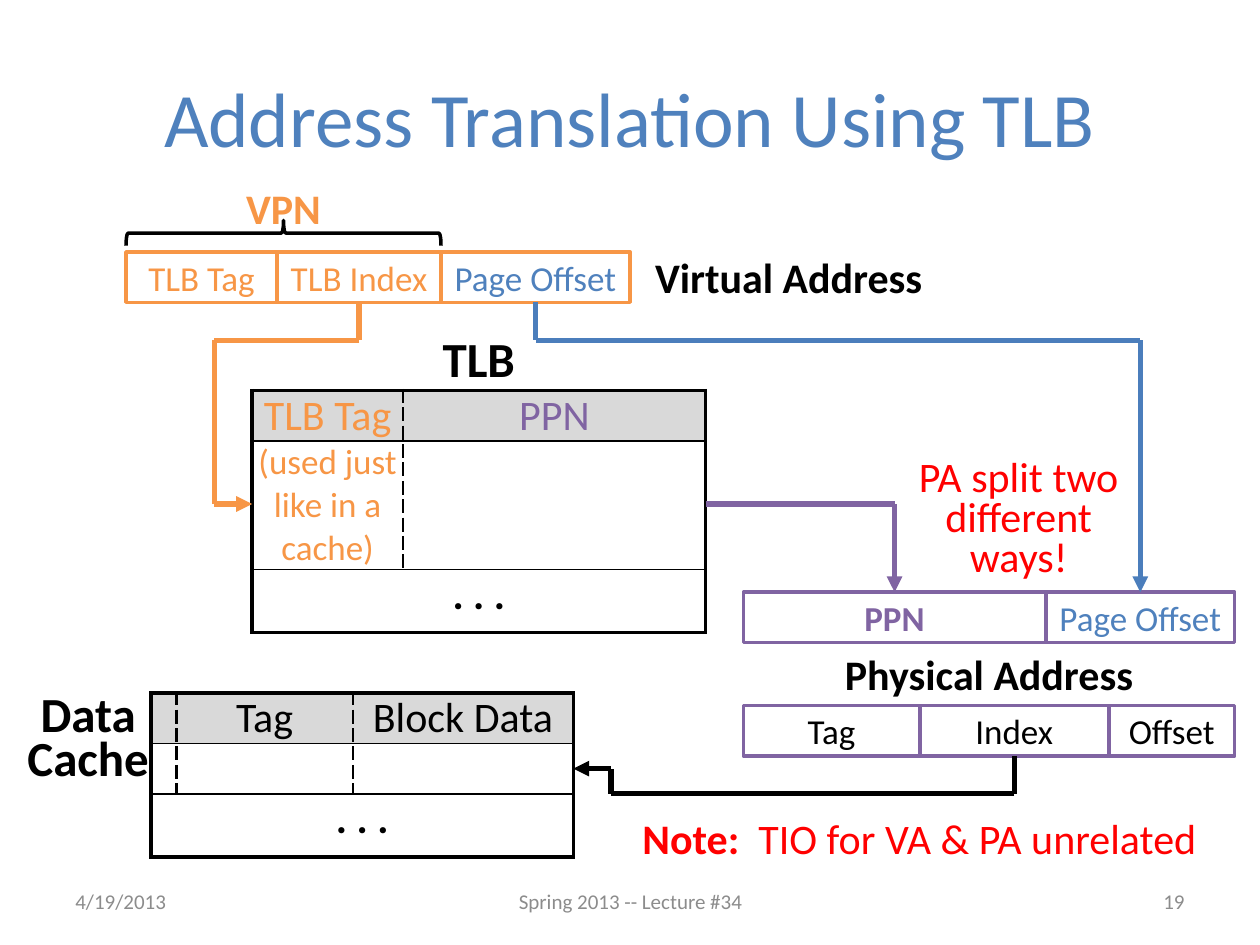
"""Build the slide on address translation with a TLB."""
import itertools
import pptx
import pptx.dml.color
import pptx.enum.shapes
import pptx.enum.text
import pptx.oxml.ns
import pptx.util
from lxml import etree

Cm, Pt = pptx.util.Cm, pptx.util.Pt
hue = pptx.dml.color.RGBColor.from_string
kinds = pptx.enum.shapes.MSO_SHAPE
side = pptx.enum.text.PP_ALIGN
rise = pptx.enum.text.MSO_ANCHOR
qn = pptx.oxml.ns.qn
inch = 2.54
orange, blue, violet, black = "F79646", "4F81BD", "8064A2", "000000"
red, gray = "FF0000", "8C8C8C"


def write(frame, text, tint, size, bold=False, align=side.CENTER, gap=None):
    for num, row in enumerate(text.split("\n")):
        para = frame.add_paragraph() if num else frame.paragraphs[0]
        para.alignment, para.line_spacing = align, gap
        run = para.add_run()
        run.text = row
        look = {"name": "Calibri", "size": Pt(size), "bold": bold}
        for key, val in look.items():
            setattr(run.font, key, val)
        run.font.color.rgb = hue(tint)
    return para


def edge(cell, name, width, dash="solid"):
    props = cell._tc.get_or_add_tcPr()
    line = etree.SubElement(props, qn("a:ln" + name), w=str(Pt(width)))
    fill = etree.SubElement(line, qn("a:solidFill"))
    etree.SubElement(fill, qn("a:srgbClr"), val=black)
    etree.SubElement(line, qn("a:prstDash"), val=dash)


deck = pptx.Presentation()
deck.slide_width, deck.slide_height = Cm(25.4), Cm(19.05)
slide = deck.slides.add_slide(deck.slide_layouts[6])
shapes = slide.shapes

mid = {"vertical_anchor": rise.MIDDLE, "word_wrap": True}
top = {"vertical_anchor": rise.TOP, "word_wrap": True}
free = {"vertical_anchor": rise.TOP, "word_wrap": False}
tight = free | {"margin_left": Cm(0.18), "margin_right": Cm(0.18),
                "margin_top": Cm(0.08), "margin_bottom": Cm(0.08)}
labels = [
    ((0.5, 0.3, 9, 1.25), mid, ("Address Translation Using TLB", blue, 44)),
    ((0.5, 6.95, 2.33, 0.4), mid, ("4/19/2013", gray, 12, False, side.LEFT)),
    ((3.42, 6.95, 3.17, 0.4), mid, ("Spring 2013 -- Lecture #34", gray, 12)),
    ((7.17, 6.95, 2.33, 0.4), mid, ("19", gray, 12, False, side.RIGHT)),
    ((2, 2.65, 3.6, 0.46), tight, ("TLB", black, 28, True, side.CENTER, 0.85)),
    ((1, 1.4, 2.5, 0.5), top, ("VPN", orange, 24, True)),
    ((5.1, 1.95, 2.35, 0.5), free,
     ("Virtual Address", black, 24, True, side.LEFT)),
    ((5.9, 5.1, 3.9, 0.5), free, ("Physical Address", black, 24, True)),
    ((0.1, 5.5, 1.2, 0.8), tight,
     ("Data\nCache", black, 28, True, side.CENTER, 0.75)),
    ((7.1, 3.6, 1.97, 1.08), top,
     ("PA split two different ways!", red, 24, False, side.CENTER, 0.8)),
    ((5, 6.4, 4.65, 0.5), top, ("Note:  ", red, 24, True, side.LEFT)),
]
for area, form, words in labels:
    frame = shapes.add_textbox(*[Cm(inch * v) for v in area]).text_frame
    for key, val in form.items():
        setattr(frame, key, val)
    last = write(frame, *words)
rest = last.add_run()
rest.text = "TIO for VA & PA unrelated"
for key, val in {"name": "Calibri", "size": Pt(24), "bold": False}.items():
    setattr(rest.font, key, val)
rest.font.color.rgb = hue(red)

bars = [
    ("VA", 1, 2, orange, [("TLB Tag", 1.2, orange), ("TLB Index", 1.3, orange),
                          ("Page Offset", 1.5, blue)]),
    ("PA", 5.9, 4.7, violet, [("PPN", 2.4, violet),
                              ("Page Offset", 1.5, blue)]),
    ("TIO", 5.9, 5.6, violet, [("Tag", 1.4, black), ("Index", 1.5, black),
                               ("Offset", 1, black)]),
]
boxes = {}
for bar, left, high, rim, parts in bars:
    for text, wide, tint in parts:
        area = [Cm(inch * v) for v in (left, high, wide, 0.4)]
        box = shapes.add_shape(kinds.RECTANGLE, *area)
        box.shadow.inherit = False
        box.fill.background()
        box.line.color.rgb, box.line.width = hue(rim), Pt(2)
        for key, val in mid.items():
            setattr(box.text_frame, key, val)
        write(box.text_frame, text, tint, 20, text == "PPN")
        boxes[bar, text] = box
        left += wide

area = [Cm(inch * v) for v in (2.15, 0.6, 0.2, 2.5)]
brace = shapes.add_shape(kinds.LEFT_BRACE, *area)
brace.rotation = 90
brace.shadow.inherit = False
brace.fill.background()
brace.line.color.rgb, brace.line.width = hue(black), Pt(2)

grids = [
    (2, 3.1, [1.2, 2.4], [0.4, 1.02, 0.5], {
        (0, 0): ("TLB Tag", orange, 24), (0, 1): ("PPN", violet, 24),
        (1, 0): ("(used just like in a cache)", orange, 20)}),
    (1.2, 5.5, [0.2, 1.4, 1.75], [0.4, 0.4, 0.5], {
        (0, 1): ("Tag", black, 24), (0, 2): ("Block Data", black, 24)}),
]
for left, high, cols, rows, cells in grids:
    area = [Cm(inch * v) for v in (left, high, sum(cols), sum(rows))]
    table = shapes.add_table(len(rows), len(cols), *area).table
    table.first_row = table.horz_banding = False
    for col, wide in zip(table.columns, cols):
        col.width = Cm(inch * wide)
    for row, tall in zip(table.rows, rows):
        row.height = Cm(inch * tall)
    end = len(cols) - 1
    table.cell(2, 0).merge(table.cell(2, end))
    cells[2, 0] = (". . .", black, 24, True)
    for r, c in itertools.product(range(3), range(end + 1)):
        cell = table.cell(r, c)
        for name in ("left", "right", "top", "bottom"):
            setattr(cell, "margin_" + name, 0)
        if not cell.is_spanned:
            whole = cell.is_merge_origin
            for name, outer in (("L", c == 0), ("R", c == end or whole)):
                edge(cell, name, *((2.25,) if outer else (1.5, "lgDash")))
            edge(cell, "T", 2.25 if r == 0 else 1)
            edge(cell, "B", 2.25 if r == 2 else 1)
        if r == 0:
            cell.fill.solid()
            cell.fill.fore_color.rgb = hue("D9D9D9")
        else:
            cell.fill.background()
        if (r, c) in cells:
            write(cell.text_frame, *cells[r, c])

paths = [
    (orange, ("VA", "TLB Index"), None,
     [(2.85, 2.4), (2.85, 2.7), (1.7, 2.7), (1.7, 4), (2, 4)]),
    (violet, None, ("PA", "PPN"), [(5.6, 4), (7.1, 4), (7.1, 4.7)]),
    ("4B7EBC", ("VA", "Page Offset"), ("PA", "Page Offset"),
     [(4.25, 2.4), (4.25, 2.7), (9.05, 2.7), (9.05, 4.7)]),
    (black, ("TIO", "Index"), None,
     [(8.05, 6), (8.05, 6.3), (4.85, 6.3), (4.85, 6.1), (4.55, 6.1)]),
]
for tint, start, stop, spots in paths:
    legs = []
    for ends in itertools.pairwise(spots):
        area = [Cm(inch * v) for spot in ends for v in spot]
        leg = shapes.add_connector(pptx.enum.shapes.MSO_CONNECTOR.STRAIGHT, *area)
        leg.line.color.rgb, leg.line.width = hue(tint), Pt(3)
        legs.append(leg)
    etree.SubElement(legs[-1].line._get_or_add_ln(), qn("a:tailEnd"),
                     type="triangle")
    for leg in legs:
        etree.SubElement(leg._element.spPr, qn("a:effectLst"))
    if start:
        legs[0].begin_connect(boxes[start], 2)
    if stop:
        legs[-1].end_connect(boxes[stop], 0)

deck.save("out.pptx")
